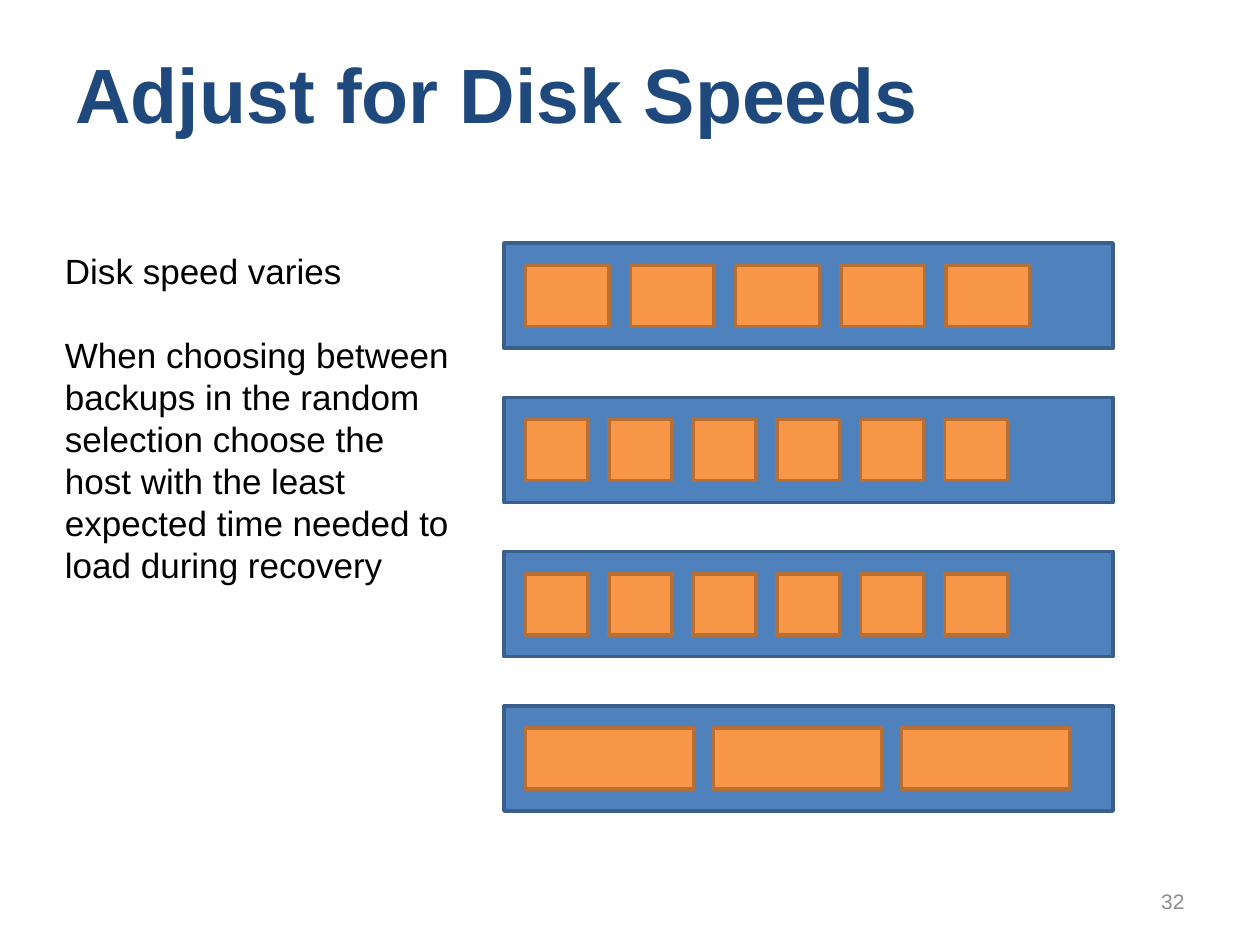
import pptx
import pptx.dml.color
import pptx.enum.shapes
import pptx.enum.text
import pptx.util

Cm = pptx.util.Cm
Pt = pptx.util.Pt
RGBColor = pptx.dml.color.RGBColor
PP_ALIGN = pptx.enum.text.PP_ALIGN
MSO_ANCHOR = pptx.enum.text.MSO_ANCHOR

NAVY = RGBColor(0x1F, 0x49, 0x7D)
BLUE = RGBColor(0x4F, 0x81, 0xBD)
DARK_BLUE = RGBColor(0x3A, 0x5F, 0x8C)
ORANGE = RGBColor(0xF7, 0x96, 0x46)
DARK_ORANGE = RGBColor(0xB7, 0x6F, 0x34)
GRAY = RGBColor(0x8C, 0x8C, 0x8C)
BLACK = RGBColor(0, 0, 0)


def add_rect(s, left, top, width, height, fill, line):
    sp = s.shapes.add_shape(pptx.enum.shapes.MSO_SHAPE.RECTANGLE,
                            Cm(left), Cm(top), Cm(width), Cm(height))
    sp.shadow.inherit = False
    sp.fill.solid()
    sp.fill.fore_color.rgb = fill
    sp.line.color.rgb = line
    sp.line.width = Pt(2)


def add_text(s, left, top, width, height, texts, size, color,
             bold=False, align=PP_ALIGN.LEFT, anchor=MSO_ANCHOR.MIDDLE):
    tf = s.shapes.add_textbox(Cm(left), Cm(top), Cm(width), Cm(height)).text_frame
    tf.word_wrap = True
    tf.vertical_anchor = anchor
    for i, text in enumerate(texts):
        p = tf.paragraphs[0] if i == 0 else tf.add_paragraph()
        p.alignment = align
        r = p.add_run()
        r.text = text
        r.font.name = "Arial"
        r.font.size = Pt(size)
        r.font.bold = bold
        r.font.color.rgb = color
    return tf


prs = pptx.Presentation()
prs.slide_width = Cm(25.4)
prs.slide_height = Cm(19.05)
s = prs.slides.add_slide(prs.slide_layouts[6])

add_text(s, 1.27, 0.76, 22.86, 2.21, ["Adjust for Disk Speeds"], 44, NAVY, bold=True)
add_text(s, 18.2, 17.65, 5.93, 1.02, ["32"], 12, GRAY, align=PP_ALIGN.RIGHT)

tf = add_text(s, 1.06, 4.9, 8.47, 7.08, [
    "Disk speed varies",
    "When choosing between backups in the random selection choose the host "
    "with the least expected time needed to load during recovery",
], 20, BLACK, anchor=MSO_ANCHOR.TOP)
for p in tf.paragraphs:
    p.line_spacing = Pt(24)
tf.paragraphs[1].space_before = Pt(24)

disks = [(5, 1.69, 2.12), (6, 1.27, 1.69), (6, 1.27, 1.69), (3, 3.39, 3.79)]
for row, (count, width, pitch) in enumerate(disks):
    top = 4.9 + 3.11 * row
    add_rect(s, 10.16, top, 12.28, 2.12, BLUE, DARK_BLUE)
    for i in range(count):
        add_rect(s, 10.59 + pitch * i, top + 0.45, width, 1.23, ORANGE, DARK_ORANGE)

prs.save("out.pptx")
